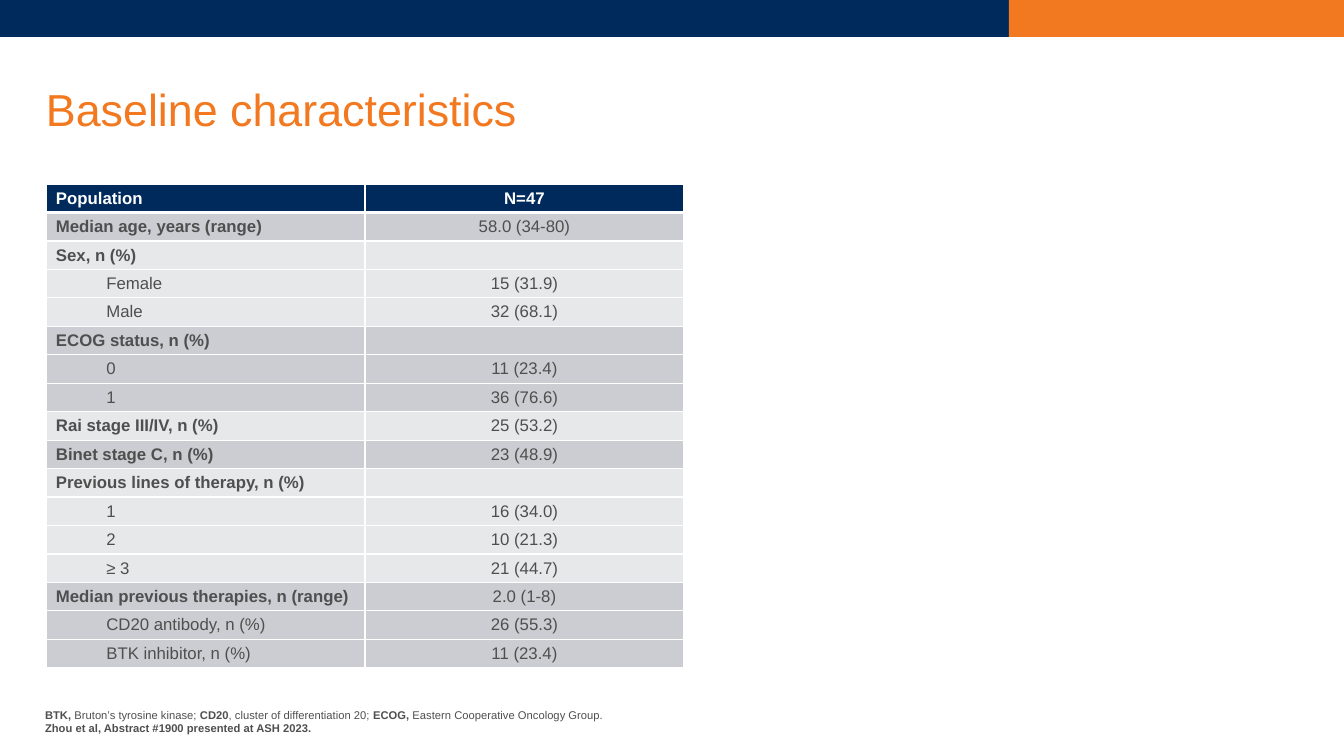
from lxml import etree
from pptx import Presentation
from pptx import util as u
from pptx.dml.color import RGBColor
from pptx.enum import shapes, text
from pptx.oxml.ns import qn

PX = 914400 / 100.8
NAVY, ORANGE, GREY, WHITE = "002A5C", "F37920", "4E4F4E", "FFFFFF"
DARK_BAND, LIGHT_BAND = "CBCDD2", "E7E8EA"

# Each group: bold heading, its value, indented sub-rows
GROUPS = [
    ("Median age, years (range)", "58.0 (34-80)", []),
    ("Sex, n (%)", "", [("Female", "15 (31.9)"), ("Male", "32 (68.1)")]),
    ("ECOG status, n (%)", "", [("0", "11 (23.4)"), ("1", "36 (76.6)")]),
    ("Rai stage III/IV, n (%)", "25 (53.2)", []),
    ("Binet stage C, n (%)", "23 (48.9)", []),
    ("Previous lines of therapy, n (%)", "",
     [("1", "16 (34.0)"), ("2", "10 (21.3)"), ("≥ 3", "21 (44.7)")]),
    ("Median previous therapies, n (range)", "2.0 (1-8)",
     [("CD20 antibody, n (%)", "26 (55.3)"), ("BTK inhibitor, n (%)", "11 (23.4)")]),
]
FOOTNOTES = [
    [("BTK, ", True), ("Bruton’s tyrosine kinase; ", False), ("CD20", True),
     (", cluster of differentiation 20; ", False), ("ECOG,", True),
     (" Eastern Cooperative Oncology Group.", False)],
    [("Zhou et al, Abstract #1900 presented at ASH 2023.", True)],
]


def px(n):
    return u.Emu(round(n * PX))


def rgb(color):
    return RGBColor.from_string(color)


def add_run(p, content, size, color, bold=False):
    r = p.add_run()
    r.text = content
    r.font.name, r.font.size, r.font.bold = "Arial", u.Pt(size), bold
    r.font.color.rgb = rgb(color)


def add_text(s, box, paragraphs, size, color, anchor, spacing=None):
    tf = s.shapes.add_textbox(*map(px, box)).text_frame
    tf.word_wrap = True
    tf.margin_left = tf.margin_top = tf.margin_right = tf.margin_bottom = 0
    tf.vertical_anchor = anchor
    for i, runs in enumerate(paragraphs):
        p = tf.add_paragraph() if i else tf.paragraphs[0]
        p.line_spacing = spacing
        for content, bold in runs:
            add_run(p, content, size, color, bold)


def add_top_band(s, box, split):
    x, y, w, h = box
    for left, width, color in ((x, split, NAVY), (x + split, w - split, ORANGE)):
        sp = s.shapes.add_shape(shapes.MSO_SHAPE.RECTANGLE,
                                px(left), px(y), px(width), px(h))
        sp.shadow.inherit = False
        sp.fill.solid()
        sp.fill.fore_color.rgb = rgb(color)
        sp.line.fill.background()


def set_borders(cell, widths):
    tcPr = cell._tc.get_or_add_tcPr()
    for i, (side, width) in enumerate(widths.items()):
        ln = etree.Element(qn("a:ln" + side), w=str(u.Pt(width)))
        fill = etree.SubElement(ln, qn("a:solidFill"))
        etree.SubElement(fill, qn("a:srgbClr"), val=WHITE)
        tcPr.insert(i, ln)


def fill_cell(cell, content, fill, color, bold, anchor, centred, indented):
    cell.margin_left = cell.margin_right = px(10)
    cell.margin_top = cell.margin_bottom = px(4)
    cell.vertical_anchor = anchor
    cell.fill.solid()
    cell.fill.fore_color.rgb = rgb(fill)
    p = cell.text_frame.paragraphs[0]
    if centred:
        p.alignment = text.PP_ALIGN.CENTER
    if indented:
        p.level = 1
        pPr = p._p.get_or_add_pPr()
        pPr.set("marL", str(u.Inches(0.5)))
        pPr.set("indent", "0")
    if content:
        add_run(p, content, 12, color, bold)
    else:
        # Keeps an empty cell from growing its row
        etree.SubElement(p._p, qn("a:endParaRPr"), sz="1200")


def add_baseline_table(s, box):
    # Rows: label, value, fill, is sub-row; shades alternate by group
    rows = [("Population", "N=47", NAVY, False)]
    for g, (heading, value, subrows) in enumerate(GROUPS):
        band = LIGHT_BAND if g % 2 else DARK_BAND
        rows.append((heading, value, band, False))
        rows += [(label, val, band, True) for label, val in subrows]

    x, y, w, h = box
    table = s.shapes.add_table(len(rows), 2, px(x), px(y), px(w), px(h)).table
    table.horz_banding = False
    for col in table.columns:
        col.width = px(w / 2)
    for i, (label, value, fill, is_sub) in enumerate(rows):
        table.rows[i].height = px(h / len(rows))
        header = i == 0
        color = WHITE if header else GREY
        anchor = text.MSO_ANCHOR.BOTTOM if header else text.MSO_ANCHOR.MIDDLE
        borders = {"L": 1, "R": 1, "T": 3 if i == 1 else 1, "B": 3 if header else 1}
        for j, content in enumerate((label, value)):
            cell = table.cell(i, j)
            bold = header or (j == 0 and not is_sub)
            fill_cell(cell, content, fill, color, bold, anchor,
                      centred=j == 1, indented=is_sub and j == 0)
            set_borders(cell, borders)


def main():
    prs = Presentation()
    prs.slide_width, prs.slide_height = px(1344), px(756)
    s = prs.slides.add_slide(prs.slide_layouts[6])

    add_top_band(s, (0, 0, 1344, 37), 1009)
    # Footnotes
    add_text(s, (45, 692, 940, 43), FOOTNOTES, 8, GREY, text.MSO_ANCHOR.BOTTOM)
    # Title
    add_text(s, (46, 63, 1253, 98), [[("Baseline characteristics", False)]],
             32, ORANGE, text.MSO_ANCHOR.MIDDLE, 0.9)
    add_baseline_table(s, (46, 184, 638, 484))

    prs.save("out.pptx")


if __name__ == "__main__":
    main()
